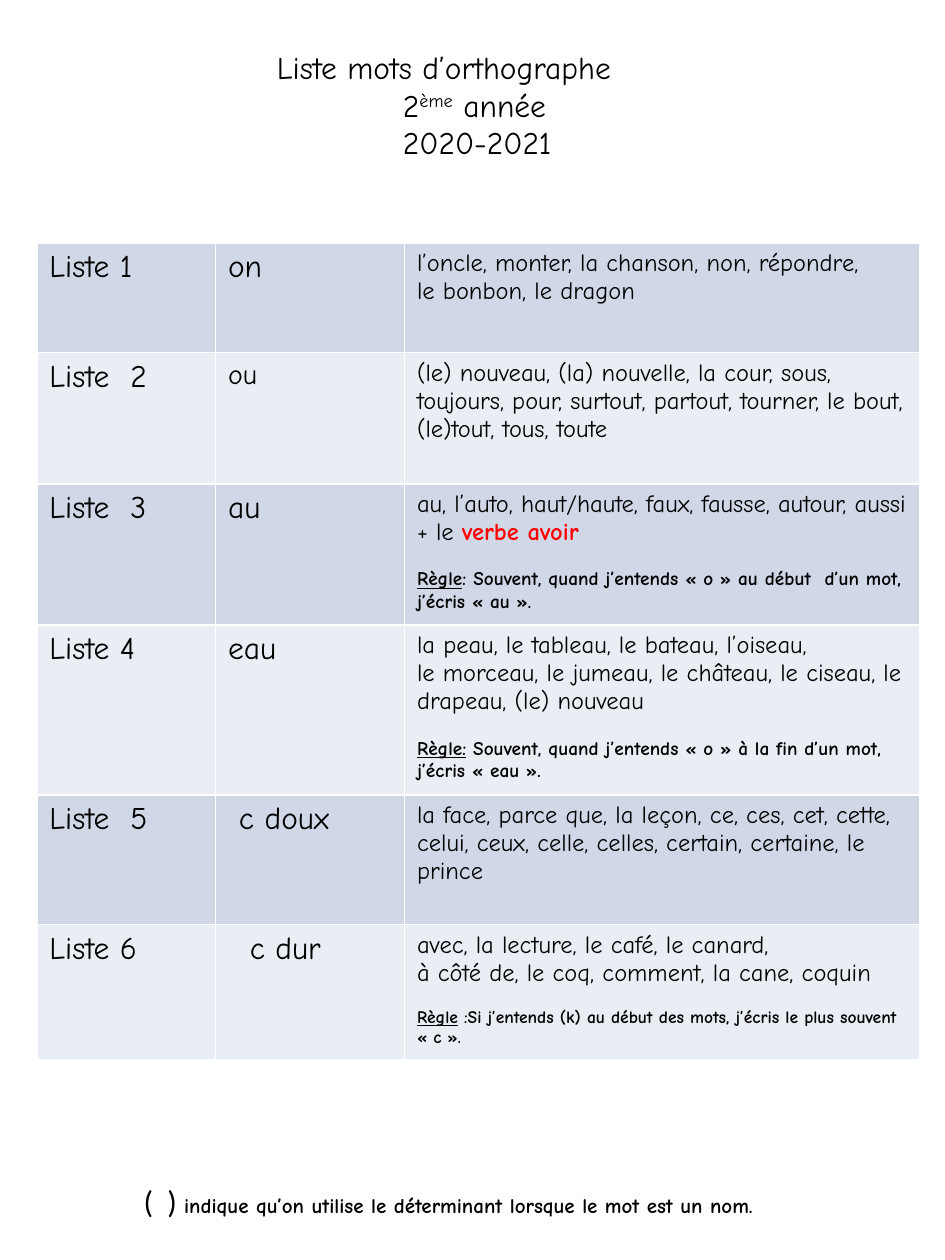
from pptx import Presentation
from pptx.dml.color import RGBColor
from pptx.oxml import parse_xml
from pptx.oxml.ns import nsdecls
from pptx.util import Inches, Pt

COLORS = {"ink": "000000", "red": "FF0000", "white": "FFFFFF",
          "blue": "D0D8E8", "pale": "E9EDF4"}
FONT = "Comic Neue"

deck = Presentation()
deck.slide_width, deck.slide_height = Inches(7.5), Inches(10)
column, row = deck.slide_width / 100, deck.slide_height / 100
slide = deck.slides.add_slide(deck.slide_layouts[6])


def write(paragraph, text, size, bold=False, underline=False, color="ink", font=FONT):
    run = paragraph.add_run()
    run.text = text
    run.font.size = Pt(size)
    run.font.name = font
    run.font.bold = bold
    run.font.underline = underline
    run.font.color.rgb = RGBColor.from_string(COLORS[color])
    return run


def add_text_frame(left, top, width, height):
    box = slide.shapes.add_textbox(int(left * column), int(top * row),
                                   int(width * column), int(height * row))
    box.text_frame.word_wrap = True
    return box.text_frame


heading = add_text_frame(28, 3.3, 43.2, 13.1)
write(heading.paragraphs[0], "Liste mots d’orthographe", 18)
grade = heading.add_paragraph()
write(grade, "2", 18)
write(grade, "ème", 18).font._element.set("baseline", "30000")
write(grade, " année", 18)
school_year = heading.add_paragraph()
write(school_year, "2020-2021", 18)
for indented in (grade, school_year):
    indented._p.get_or_add_pPr().set("marL", str(Inches(1)))

lists = [
    {"name": "Liste 1", "sound": "on", "height": 8.7,
     "words": ["l’oncle, monter, la chanson, non, répondre,", "le bonbon, le dragon"]},
    {"name": "Liste  2", "sound": "ou", "height": 10.4, "sound_size": 16,
     "words": ["(le) nouveau, (la) nouvelle, la cour, sous, toujours, pour, surtout, "
               "partout, tourner, le bout, (le)tout, tous, toute"]},
    {"name": "Liste  3", "sound": "au", "height": 11.2,
     "words": ["au, l’auto, haut/haute, faux, fausse, autour, aussi + le "],
     "verb": "verbe avoir",
     "rule": ("Règle", ": Souvent, quand j’entends « o » au début  d’un mot, "
              "j’écris « au ».", 11)},
    {"name": "Liste 4", "sound": "eau", "height": 13.5,
     "words": ["la peau, le tableau, le bateau, l’oiseau,",
               "le morceau, le jumeau, le château, le ciseau, le drapeau, (le) nouveau"],
     "rule": ("Règle:", " Souvent, quand j’entends « o » à la fin d’un mot, "
              "j’écris « eau ».", 11)},
    {"name": "Liste  5", "sound": "c doux", "height": 10.3, "indent": 1.15,
     "words": ["la face, parce que, la leçon, ce, ces, cet, cette, celui, ceux, celle, "
               "celles, certain, certaine, le prince"]},
    {"name": "Liste 6", "sound": "c dur", "height": 10.7, "indent": 2.3,
     "words": ["avec, la lecture, le café, le canard,",
               "à côté de, le coq, comment, la cane, coquin"],
     "rule": ("Règle", " :Si j’entends (k) au début des mots, j’écris le plus souvent "
              "« c ».", 10)},
]

widths = [18.9, 20, 54.5]
spelling = slide.shapes.add_table(
    len(lists), len(widths), int(3.9 * column), int(19.3 * row),
    int(sum(widths) * column), int(sum(entry["height"] for entry in lists) * row)).table
spelling.first_row = False
spelling.horz_banding = False
for table_column, width in zip(spelling.columns, widths):
    table_column.width = int(width * column)

for index, entry in enumerate(lists):
    spelling.rows[index].height = int(entry["height"] * row)
    name, sound, words = spelling.rows[index].cells
    write(name.text_frame.paragraphs[0], entry["name"], 18)
    write(sound.text_frame.paragraphs[0], entry["sound"], entry.get("sound_size", 18))
    sound.margin_left = int(Inches(0.1) + entry.get("indent", 0) * column)

    for number, line in enumerate(entry["words"]):
        paragraph = words.text_frame.add_paragraph() if number else words.text_frame.paragraphs[0]
        write(paragraph, line, 14)
    if "verb" in entry:
        write(paragraph, entry["verb"], 14, bold=True, color="red")
    if "rule" in entry:
        label, advice, size = entry["rule"]
        rule = words.text_frame.add_paragraph()
        rule.space_before = Pt(size * 1.15)
        write(rule, label, size, bold=True, underline=True)
        write(rule, advice, size, bold=True)

    for cell in (name, sound, words):
        cell.fill.solid()
        cell.fill.fore_color.rgb = RGBColor.from_string(COLORS["pale" if index % 2 else "blue"])
        for order, side in enumerate(("lnL", "lnR", "lnT", "lnB")):
            cell._tc.get_or_add_tcPr().insert(order, parse_xml(
                f'<a:{side} {nsdecls("a")} w="{Pt(1)}"><a:solidFill>'
                f'<a:srgbClr val="{COLORS["white"]}"/></a:solidFill></a:{side}>'))

footnote = add_text_frame(13.9, 93.3, 74.9, 4).paragraphs[0]
write(footnote, "(  ) ", 18, font="Calibri")
write(footnote, "indique qu’on utilise le déterminant lorsque le mot est un nom.", 12, bold=True)

deck.save("out.pptx")
